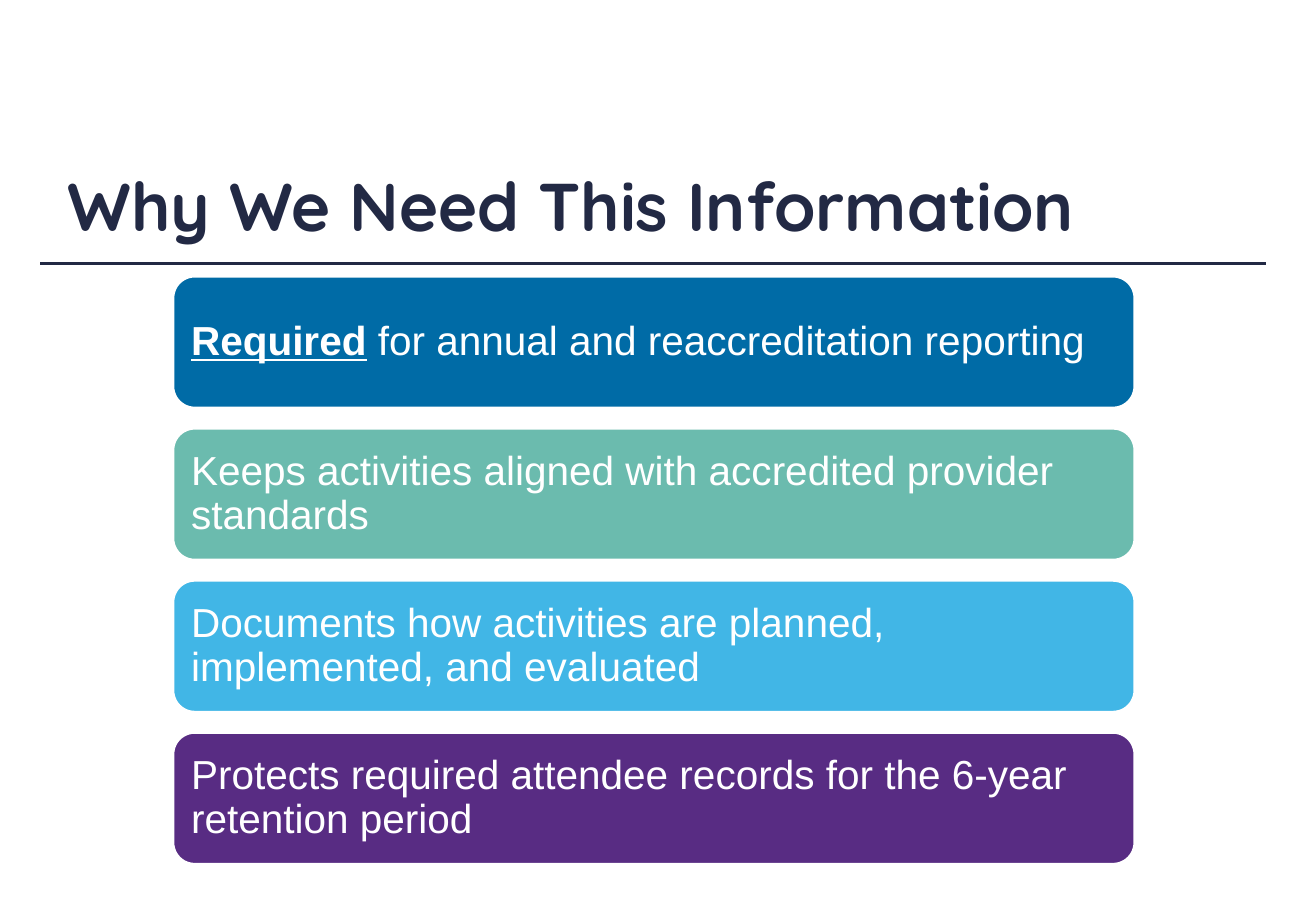
from dataclasses import dataclass

from lxml.etree import SubElement
from pptx import Presentation
from pptx.dml.color import RGBColor
from pptx.enum.shapes import MSO_CONNECTOR, MSO_SHAPE
from pptx.enum.text import MSO_ANCHOR, PP_ALIGN
from pptx.oxml.ns import qn
from pptx.slide import Slide
from pptx.text.text import TextFrame
from pptx.util import Cm, Pt

NAVY = "222944"
WHITE = "FFFFFF"
BAR_LEFT, BAR_TOP = 3.61, 5.77
BAR_WIDTH, BAR_HEIGHT = 20.12, 2.77
BAR_PITCH = 3.18


@dataclass
class Reason:
    fill: str
    text: str
    emphasis: str = ""


REASONS = [
    Reason("006BA6", " for annual and reaccreditation reporting", "Required"),
    Reason("6BBBAE", "Keeps activities aligned with accredited provider standards"),
    Reason("41B6E6", "Documents how activities are planned, implemented, and evaluated"),
    Reason("582C83", "Protects required attendee records for the 6-year retention period"),
]


def rgb(color: str) -> RGBColor:
    return RGBColor.from_string(color)


def set_margins(tf: TextFrame, horizontal: float, vertical: float) -> None:
    tf.margin_left = tf.margin_right = Cm(horizontal)
    tf.margin_top = tf.margin_bottom = Cm(vertical)


def add_title(s: Slide, text: str) -> None:
    tf = s.shapes.add_textbox(Cm(1.37), Cm(3.4), Cm(24.77), Cm(2.16)).text_frame
    tf.word_wrap = True
    set_margins(tf, 0.05, 0.03)
    p = tf.paragraphs[0]
    p.text = text
    p.font.name = "Quicksand"
    p.font.size = Pt(40)
    p.font.bold = True
    p.font.color.rgb = rgb(NAVY)


def add_title_rule(s: Slide) -> None:
    rule = s.shapes.add_connector(
        MSO_CONNECTOR.STRAIGHT, Cm(0.84), Cm(5.51), Cm(26.47), Cm(5.51)
    )
    rule.line.color.rgb = rgb(NAVY)
    rule.line.width = Pt(2.25)
    SubElement(rule._element.spPr, qn("a:effectLst"))


def add_reason(s: Slide, reason: Reason, top: float) -> None:
    sp = s.shapes.add_shape(
        MSO_SHAPE.ROUNDED_RECTANGLE,
        Cm(BAR_LEFT), Cm(top), Cm(BAR_WIDTH), Cm(BAR_HEIGHT),
    )
    sp.shadow.inherit = False
    sp.fill.solid()
    sp.fill.fore_color.rgb = rgb(reason.fill)
    sp.line.color.rgb = rgb(WHITE)
    sp.line.width = Pt(2)

    tf = sp.text_frame
    tf.word_wrap = True
    tf.vertical_anchor = MSO_ANCHOR.MIDDLE
    set_margins(tf, 0.25, 0.25)
    p = tf.paragraphs[0]
    p.alignment = PP_ALIGN.LEFT
    p.line_spacing = 0.9
    p.font.name = "Arial"
    p.font.size = Pt(24)
    p.font.color.rgb = rgb(WHITE)
    if reason.emphasis:
        r = p.add_run()
        r.text = reason.emphasis
        r.font.bold = True
        r.font.underline = True
    p.add_run().text = reason.text


def main() -> None:
    prs = Presentation()
    prs.slide_width, prs.slide_height = Cm(27.51), Cm(19.05)
    s = prs.slides.add_slide(prs.slide_layouts[6])
    add_title_rule(s)
    add_title(s, "Why We Need This Information")
    for i, reason in enumerate(REASONS):
        add_reason(s, reason, BAR_TOP + i * BAR_PITCH)
    prs.save("out.pptx")


if __name__ == "__main__":
    main()
